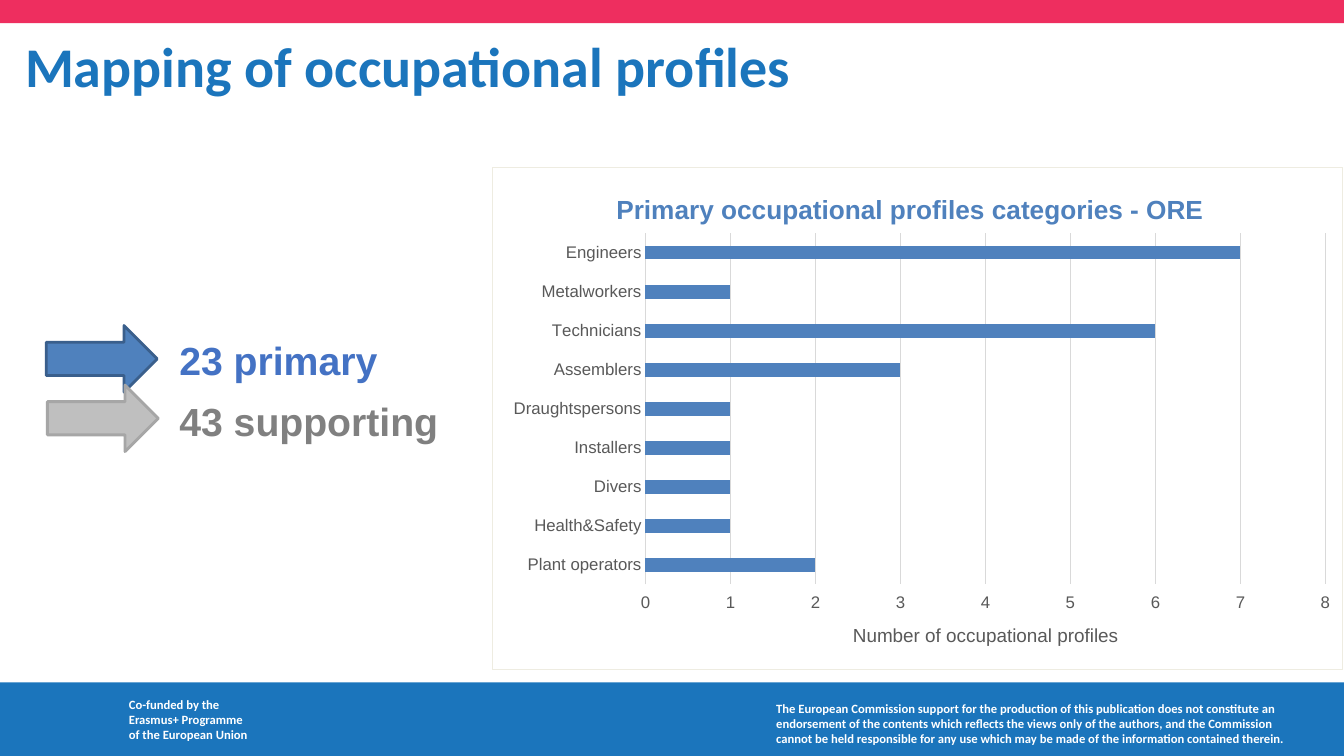
from lxml.etree import SubElement
from pptx import Presentation
from pptx.chart.data import CategoryChartData
from pptx.dml.color import RGBColor
from pptx.enum.chart import XL_CHART_TYPE, XL_TICK_LABEL_POSITION, XL_TICK_MARK
from pptx.enum.shapes import MSO_SHAPE
from pptx.oxml import parse_xml
from pptx.oxml.ns import nsdecls, qn
from pptx.util import Emu, Pt

PX = 9144  # 100 px to the inch
BLUE, BAR, GREY = "1B75BC", "4F81BD", "808080"
PROFILES = {
    "Engineers": 7, "Metalworkers": 1, "Technicians": 6, "Assemblers": 3,
    "Draughtspersons": 1, "Installers": 1, "Divers": 1, "Health&Safety": 1,
    "Plant operators": 2,
}
DISCLAIMER = (
    "The European Commission support for the production of this publication "
    "does not constitute an endorsement of the contents which reflects the "
    "views only of the authors, and the Commission cannot be held responsible "
    "for any use which may be made of the information contained therein."
)


def px(*lengths):
    return [Emu(n * PX) for n in lengths]


def rgb(color):
    return RGBColor.from_string(color)


def set_font(font, size, color, name="Arial", bold=False):
    font.size, font.name, font.bold = Pt(size), name, bold
    font.color.rgb = rgb(color)


def set_line(line, color, width=0.75):
    line.color.rgb = rgb(color)
    line.width = Pt(width)


def add_text(s, box, text, spacing=None, **fmt):
    tf = s.shapes.add_textbox(*px(*box)).text_frame
    tf.word_wrap = True
    for i, line in enumerate(text.split("\n")):
        p = tf.paragraphs[0] if i == 0 else tf.add_paragraph()
        if spacing:
            p.line_spacing = spacing
        r = p.add_run()
        r.text = line
        set_font(r.font, **fmt)


def add_block(s, kind, box, fill, line=None):
    sp = s.shapes.add_shape(kind, *px(*box))
    sp.shadow.inherit = False
    sp.fill.solid()
    sp.fill.fore_color.rgb = rgb(fill)
    if line:
        set_line(sp.line, line, 2)
    else:
        sp.line.fill.background()


def set_layout(element, index, **values):
    """Place a chart part by fractions of the chart area."""
    for old in element.findall(qn("c:layout")):
        element.remove(old)
    layout = parse_xml(f"<c:layout {nsdecls('c')}><c:manualLayout/></c:layout>")
    for tag, val in values.items():
        SubElement(layout[0], qn(f"c:{tag}")).set("val", str(val))
    element.insert(index, layout)


def set_title(title, text, x, y, **fmt):
    r = title.text_frame.paragraphs[0].add_run()
    r.text = text
    set_font(r.font, **fmt)
    set_layout(title.element, 1, xMode="edge", yMode="edge", x=x, y=y)


def add_profile_chart(s, box):
    data = CategoryChartData()
    data.categories = list(PROFILES)
    data.add_series("Series 1", list(PROFILES.values()))
    chart = s.shapes.add_chart(XL_CHART_TYPE.BAR_CLUSTERED, *px(*box), data).chart
    chart.has_legend = False
    set_font(chart.font, 10, "000000")

    # Bars
    plot = chart.plots[0]
    plot.gap_width = 182
    plot.vary_by_categories = False
    fill = plot.series[0].format.fill
    fill.solid()
    fill.fore_color.rgb = rgb(BAR)

    # Axes: categories run downwards, values are labelled at the bottom
    cat, val = chart.category_axis, chart.value_axis
    for axis in (cat, val):
        axis.major_tick_mark = axis.minor_tick_mark = XL_TICK_MARK.NONE
        set_font(axis.tick_labels.font, 12, "595959")
    cat.reverse_order = True
    set_line(cat.format.line, "D9D9D9")
    val.tick_label_position = XL_TICK_LABEL_POSITION.HIGH
    val.minimum_scale, val.maximum_scale, val.major_unit = 0, 8, 1
    val.format.line.fill.background()
    set_line(val.major_gridlines.format.line, "D9D9D9")

    # Titles, plot position and border
    set_title(chart.chart_title, "Primary occupational profiles categories - ORE",
              0.14, 0.04, size=18.7, color=BAR, bold=True)
    set_title(val.axis_title, "Number of occupational profiles",
              0.42, 0.9, size=13.5, color="595959")
    root = chart.element.find(qn("c:chart"))
    set_layout(root.find(qn("c:plotArea")), 0, layoutTarget="inner", xMode="edge",
               yMode="edge", x=0.18, y=0.13, w=0.8, h=0.7)
    root.addnext(parse_xml(
        f'<c:spPr {nsdecls("c", "a")}><a:noFill/><a:ln w="{Pt(0.75)}"><a:solidFill>'
        '<a:srgbClr val="EEECE1"/></a:solidFill></a:ln></c:spPr>'))


def main():
    prs = Presentation()
    prs.slide_width, prs.slide_height = px(1333, 750)
    s = prs.slides.add_slide(prs.slide_layouts[6])

    # Bands and footer
    add_block(s, MSO_SHAPE.RECTANGLE, (0, 0, 1333, 23), "EE2E5F")
    add_block(s, MSO_SHAPE.RECTANGLE, (0, 677, 1333, 73), BLUE)
    footer = dict(size=9, color="FFFFFF", name="Calibri", bold=True)
    add_text(s, (760, 690, 545, 60), DISCLAIMER, **footer)
    add_text(s, (118, 686, 545, 60),
             "Co-funded by the\nErasmus+ Programme\nof the European Union", **footer)

    # Chart
    add_profile_chart(s, (488, 166, 844, 499))

    # Counts with arrows
    counts = [("23 primary", "4472C4", 325, (46, 323), BAR, "3A5F8C"),
              ("43 supporting", GREY, 386, (47, 382), "BFBFBF", "A6A6A6")]
    for text, color, top, corner, fill, line in counts:
        add_block(s, MSO_SHAPE.RIGHT_ARROW, (*corner, 110, 66), fill, line)
        add_text(s, (168, top, 421, 61), text, spacing=1.07,
                 size=28, color=color, bold=True)

    # Title
    add_text(s, (15, 26, 967, 63), "Mapping of occupational profiles",
             size=40, color=BLUE, name="Calibri", bold=True)
    prs.save("out.pptx")


if __name__ == "__main__":
    main()
